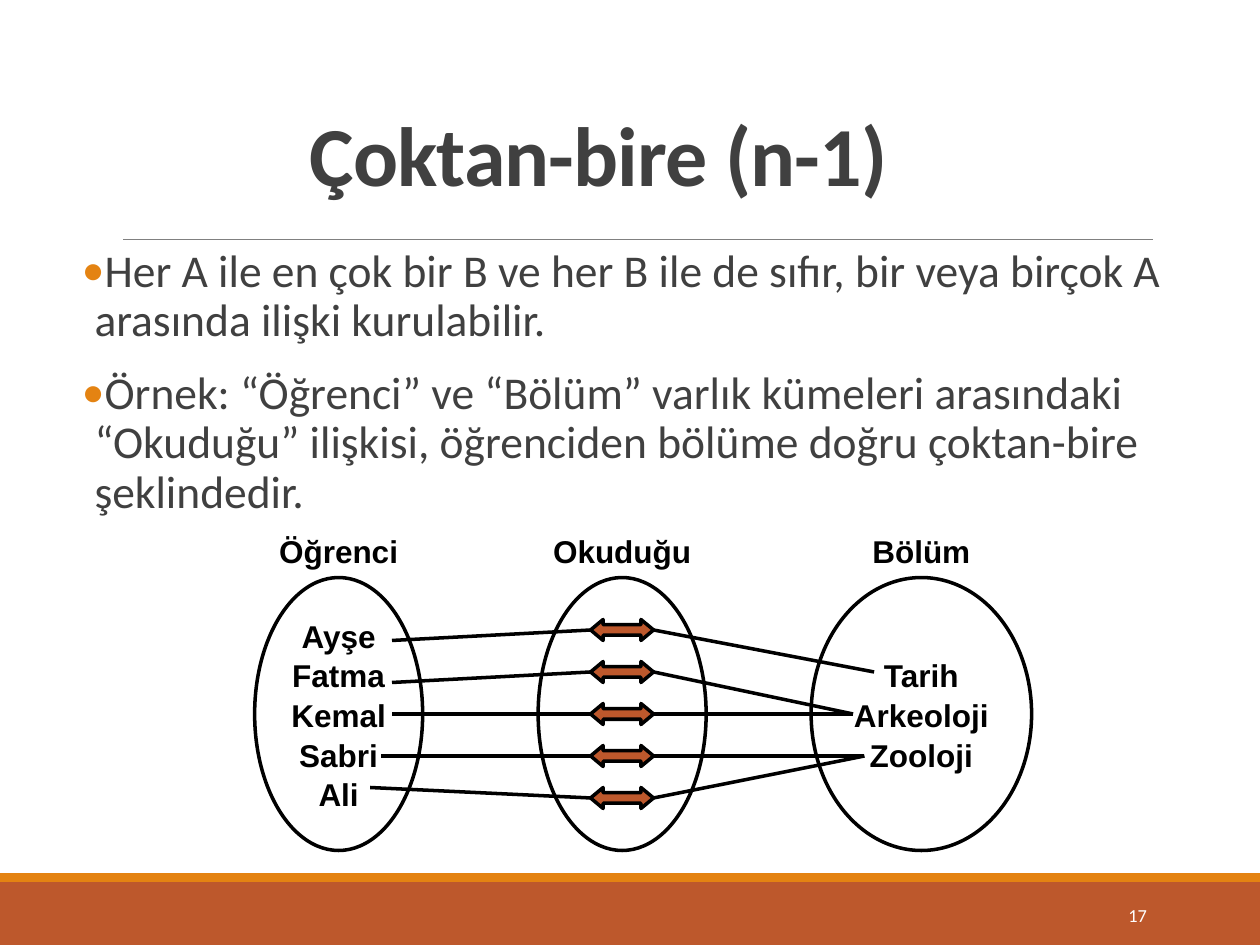
"""Build the many-to-one relationship slide with its set diagram."""
from typing import NamedTuple

from lxml import etree
from pptx import Presentation
from pptx.dml.color import RGBColor
from pptx.enum import shapes, text
from pptx.oxml import ns
from pptx.util import Pt

BLACK, GREY, RUST, ORANGE = "000000", "404040", "BD582C", "E48312"
ARROW_LEFT, ARROW_WIDTH, ARROW_HEIGHT = 337.5, 36, 12
FIRST_ROW, ROW_STEP = 360, 24


class Box(NamedTuple):
    """A rectangle in points."""
    left: float
    top: float
    width: float
    height: float


class EntitySet(NamedTuple):
    """A labelled oval with its members."""
    label: str
    left: float
    width: float
    members: tuple = ()


class Relation(NamedTuple):
    """Ends of one student-to-department link, in points."""
    student_x: float
    student_y: float
    department_x: float
    department_y: float


SETS = (
    EntitySet("Öğrenci", 145.5, 96, ("Ayşe", "Fatma", "Kemal", "Sabri", "Ali")),
    EntitySet("Okuduğu", 307.5, 96),
    EntitySet("Bölüm", 463.5, 126, ("Tarih", "Arkeoloji", "Zooloji")),
)
RELATIONS = (
    Relation(224, 366, 499.5, 384),
    Relation(224, 390, 487.5, 408),
    Relation(224, 408, 487.5, 408),
    Relation(217.5, 432, 494, 432),
    Relation(211.5, 450, 494, 432),
)
BULLETS = (
    "Her A ile en çok bir B ve her B ile de sıfır, bir veya birçok A "
    "arasında ilişki kurulabilir.",
    "Örnek: “Öğrenci” ve “Bölüm” varlık kümeleri arasındaki “Okuduğu” "
    "ilişkisi, öğrenciden bölüme doğru çoktan-bire şeklindedir.",
)


def colour(hex_code: str) -> RGBColor:
    """Turn a hex string into a colour."""
    return RGBColor.from_string(hex_code)


def place(shape, box: Box) -> None:
    """Move and size a shape."""
    shape.left, shape.top, shape.width, shape.height = map(Pt, box)


def write(shape, lines, *, size, font="Calibri", hex_code=BLACK, bold=False,
          align=text.PP_ALIGN.LEFT, anchor=text.MSO_ANCHOR.MIDDLE,
          spacing=1.0, before=0, after=0, wrap=True, inset=7.2) -> None:
    """Write one paragraph per line in the given format."""
    frame = shape.text_frame
    frame.auto_size = text.MSO_AUTO_SIZE.NONE
    frame.word_wrap, frame.vertical_anchor = wrap, anchor
    frame.margin_left = frame.margin_right = Pt(inset)
    frame.margin_top = frame.margin_bottom = Pt(3.6)
    frame.text = "\n".join(lines)
    for paragraph in frame.paragraphs:
        paragraph.alignment, paragraph.line_spacing = align, spacing
        paragraph.space_before, paragraph.space_after = Pt(before), Pt(after)
        style = paragraph.runs[0].font
        style.name, style.size, style.bold = font, Pt(size), bold
        style.color.rgb = colour(hex_code)


def add_bullet(paragraph) -> None:
    """Give a paragraph an orange bullet and a hanging indent."""
    props = paragraph._p.get_or_add_pPr()
    props.set("marL", str(Pt(7.2)))
    props.set("indent", str(Pt(-7.2)))
    tint = etree.SubElement(props, ns.qn("a:buClr"))
    etree.SubElement(tint, ns.qn("a:srgbClr"), val=ORANGE)
    etree.SubElement(props, ns.qn("a:buFont"), typeface="Calibri")
    etree.SubElement(props, ns.qn("a:buChar"), char="•")


def add_figure(slide, kind, box: Box, fill=None, outline=None):
    """Add a preset shape with optional fill and outline."""
    figure = slide.shapes.add_shape(kind, *map(Pt, box))
    figure.shadow.inherit = False
    if fill:
        figure.fill.solid()
        figure.fill.fore_color.rgb = colour(fill)
    else:
        figure.fill.background()
    if outline:
        figure.line.color.rgb = colour(outline)
        figure.line.width = Pt(2)
    else:
        figure.line.fill.background()
    return figure


def add_line(slide, *ends: float, hex_code=BLACK, width=2.0) -> None:
    """Draw a straight line between two points."""
    line = slide.shapes.add_connector(shapes.MSO_CONNECTOR.STRAIGHT, *map(Pt, ends))
    line.line.color.rgb, line.line.width = colour(hex_code), Pt(width)
    etree.SubElement(line._element.spPr, ns.qn("a:effectLst"))


def add_entity_set(slide, entity: EntitySet) -> None:
    """Draw an oval, its members and the label above it."""
    oval = add_figure(slide, shapes.MSO_SHAPE.OVAL,
                      Box(entity.left, 330, entity.width, 156), outline=BLACK)
    label = slide.shapes.add_textbox(
        *map(Pt, Box(entity.left, 300, entity.width, 29)))
    for holder, lines in ((label, [entity.label]), (oval, entity.members)):
        if lines:
            write(holder, lines, size=18, font="Arial", bold=True, spacing=1.05,
                  align=text.PP_ALIGN.CENTER, wrap=False)


def add_relation(slide, relation: Relation, row_y: float) -> None:
    """Draw a double arrow and the lines to both of its members."""
    add_line(slide, ARROW_LEFT, row_y, relation.student_x, relation.student_y)
    add_line(slide, ARROW_LEFT + ARROW_WIDTH, row_y,
             relation.department_x, relation.department_y)
    arrow = add_figure(
        slide, shapes.MSO_SHAPE.LEFT_RIGHT_ARROW,
        Box(ARROW_LEFT, row_y - ARROW_HEIGHT / 2, ARROW_WIDTH, ARROW_HEIGHT),
        RUST, BLACK)
    arrow.adjustments[0], arrow.adjustments[1] = 0.5, 0.6


def main() -> None:
    """Build and save the slide."""
    deck = Presentation()
    deck.slide_width, deck.slide_height = Pt(720), Pt(540)
    slide = deck.slides.add_slide(deck.slide_layouts[1])
    title, body = slide.placeholders

    add_figure(slide, shapes.MSO_SHAPE.RECTANGLE, Box(0, 504, 720, 36), RUST)
    add_figure(slide, shapes.MSO_SHAPE.RECTANGLE, Box(0, 499, 720, 5), ORANGE)
    add_line(slide, 70.5, 136.8, 658.8, 136.8, hex_code="808080", width=0.5)

    place(title, Box(54, 66, 576, 54))
    write(title, ["Çoktan-bire (n-1)"], size=48, hex_code=GREY, bold=True,
          align=text.PP_ALIGN.CENTER, anchor=text.MSO_ANCHOR.BOTTOM, spacing=0.85)
    title.text_frame.paragraphs[0].runs[0].font._element.set("spc", "-50")

    place(body, Box(46.8, 138, 618, 198))
    write(body, BULLETS, size=26, hex_code=GREY, anchor=text.MSO_ANCHOR.TOP,
          spacing=0.9, before=12, after=2, inset=0)
    for paragraph in body.text_frame.paragraphs:
        add_bullet(paragraph)

    for entity in SETS:
        add_entity_set(slide, entity)
    for row, relation in enumerate(RELATIONS):
        add_relation(slide, relation, FIRST_ROW + row * ROW_STEP)

    page_number = slide.shapes.add_textbox(*map(Pt, Box(584.5, 508.5, 78, 29)))
    write(page_number, ["17"], size=10.5, hex_code="FFFFFF",
          align=text.PP_ALIGN.RIGHT)
    deck.save("out.pptx")


if __name__ == "__main__":
    main()
